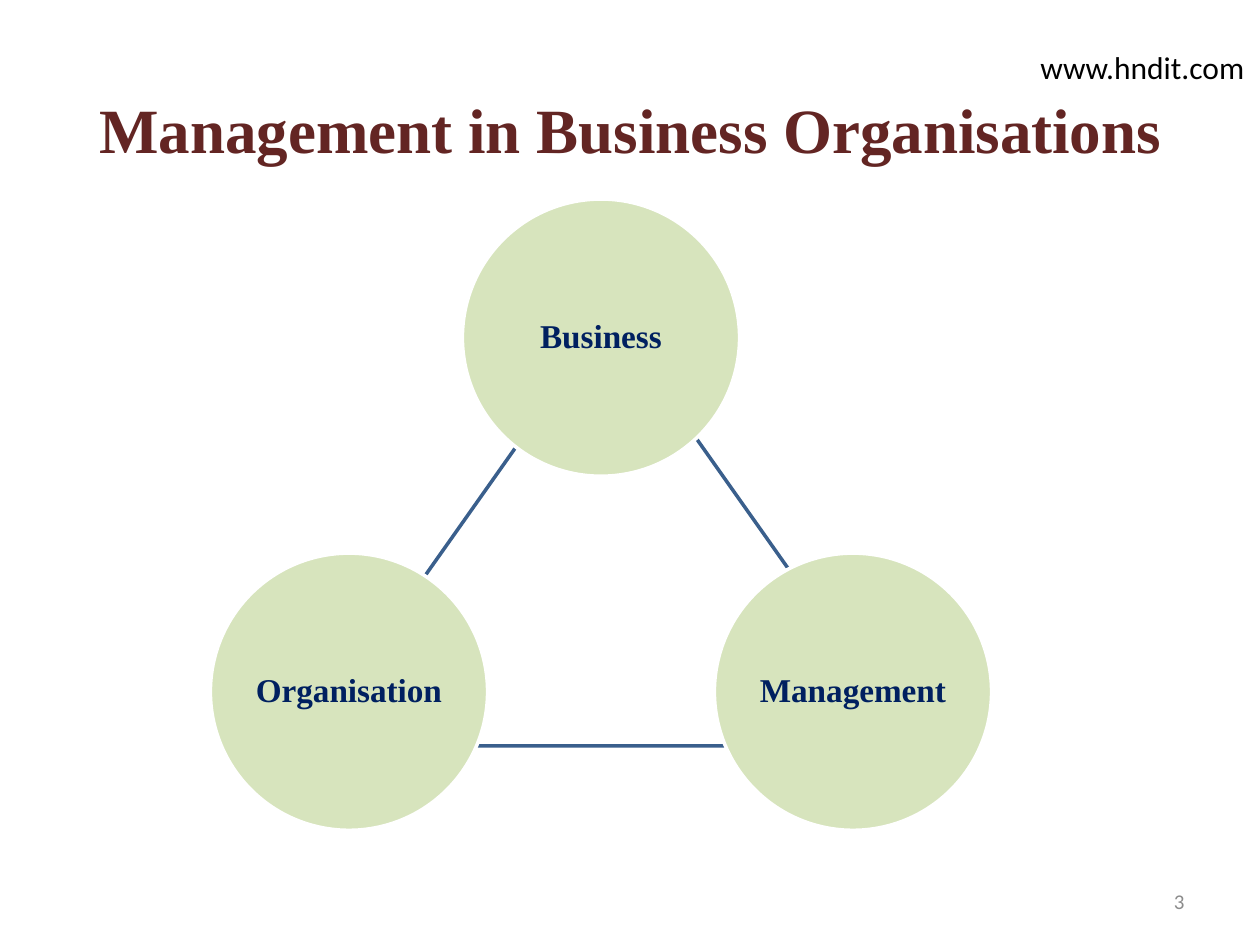
from pptx import Presentation
from pptx.dml.color import RGBColor
from pptx.enum.shapes import MSO_SHAPE
from pptx.enum.text import MSO_ANCHOR, PP_ALIGN
from pptx.util import Inches, Pt

LEFT, CENTER, RIGHT = PP_ALIGN.LEFT, PP_ALIGN.CENTER, PP_ALIGN.RIGHT
TOP, MIDDLE = MSO_ANCHOR.TOP, MSO_ANCHOR.MIDDLE
ELLIPSE, TRIANGLE = MSO_SHAPE.OVAL, MSO_SHAPE.FLOWCHART_EXTRACT

COLORS = {"title": "632523", "label": "002060", "circle": "D7E4BD", "edge": "FFFFFF",
          "triangle": "3A5F8C", "number": "8C8C8C", "site": "000000"}
FONTS = {
    "title": {"name": "Times New Roman", "size": Pt(36), "bold": True},
    "label": {"name": "Times New Roman", "size": Pt(19), "bold": True},
    "number": {"name": "Calibri", "size": Pt(12)},
    "site": {"name": "Calibri", "size": Pt(18)},
}

# style, text, (left, top, width, height), alignment, anchor, wrap
TEXTS = [
    ("title", "Management in Business Organisations", (0.42, 0.67, 9.17, 0.71), CENTER, TOP, True),
    ("number", "3", (7.17, 6.95, 2.33, 0.4), RIGHT, MIDDLE, True),
    ("site", "www.hndit.com", (8.16, 0.33, 1.84, 0.4), LEFT, TOP, False),
]

# label, column and row of the circle around the triangle's axis
CIRCLES = [("Business", 0, 0), ("Management", 1, 1), ("Organisation", -1, 1)]
SLIDE_W, SLIDE_H = 10, 7.5
AXIS_X, FIRST_Y = 4.77, 2.68
STEP_X, STEP_Y = 2, 2.81
DIAMETER = 2.2
TRIANGLE_BOX = (2.42, 2.5, 4.83, 3.42)


def rgb(key):
    return RGBColor.from_string(COLORS[key])


def write(sp, style, text, align, anchor, wrap=True):
    tf = sp.text_frame
    tf.word_wrap, tf.vertical_anchor = wrap, anchor
    p = tf.paragraphs[0]
    p.alignment = align
    r = p.add_run()
    r.text = text
    for attr, value in FONTS[style].items():
        setattr(r.font, attr, value)
    r.font.color.rgb = rgb(style)
    return tf, p


def add_outlined(slide, kind, box, line, fill=None):
    sp = slide.shapes.add_shape(kind, *map(Inches, box))
    sp.shadow.inherit = False
    if fill:
        sp.fill.solid()
        sp.fill.fore_color.rgb = rgb(fill)
    else:
        sp.fill.background()
    sp.line.color.rgb = rgb(line)
    sp.line.width = Pt(2)
    return sp


def add_circle(slide, label, col, row):
    left = AXIS_X + col * STEP_X - DIAMETER / 2
    top = FIRST_Y + row * STEP_Y - DIAMETER / 2
    sp = add_outlined(slide, ELLIPSE, (left, top, DIAMETER, DIAMETER), "edge", "circle")
    tf, p = write(sp, "label", label, CENTER, MIDDLE)
    for side in ("left", "top", "right", "bottom"):
        setattr(tf, f"margin_{side}", Inches(0.03))
    p.line_spacing = 0.9


def main():
    prs = Presentation()
    prs.slide_width, prs.slide_height = Inches(SLIDE_W), Inches(SLIDE_H)
    slide = prs.slides.add_slide(prs.slide_layouts[6])
    add_outlined(slide, TRIANGLE, TRIANGLE_BOX, "triangle")
    for circle in CIRCLES:
        add_circle(slide, *circle)
    for style, text, box, align, anchor, wrap in TEXTS:
        sp = slide.shapes.add_textbox(*map(Inches, box))
        write(sp, style, text, align, anchor, wrap)
    prs.save("out.pptx")


if __name__ == "__main__":
    main()
